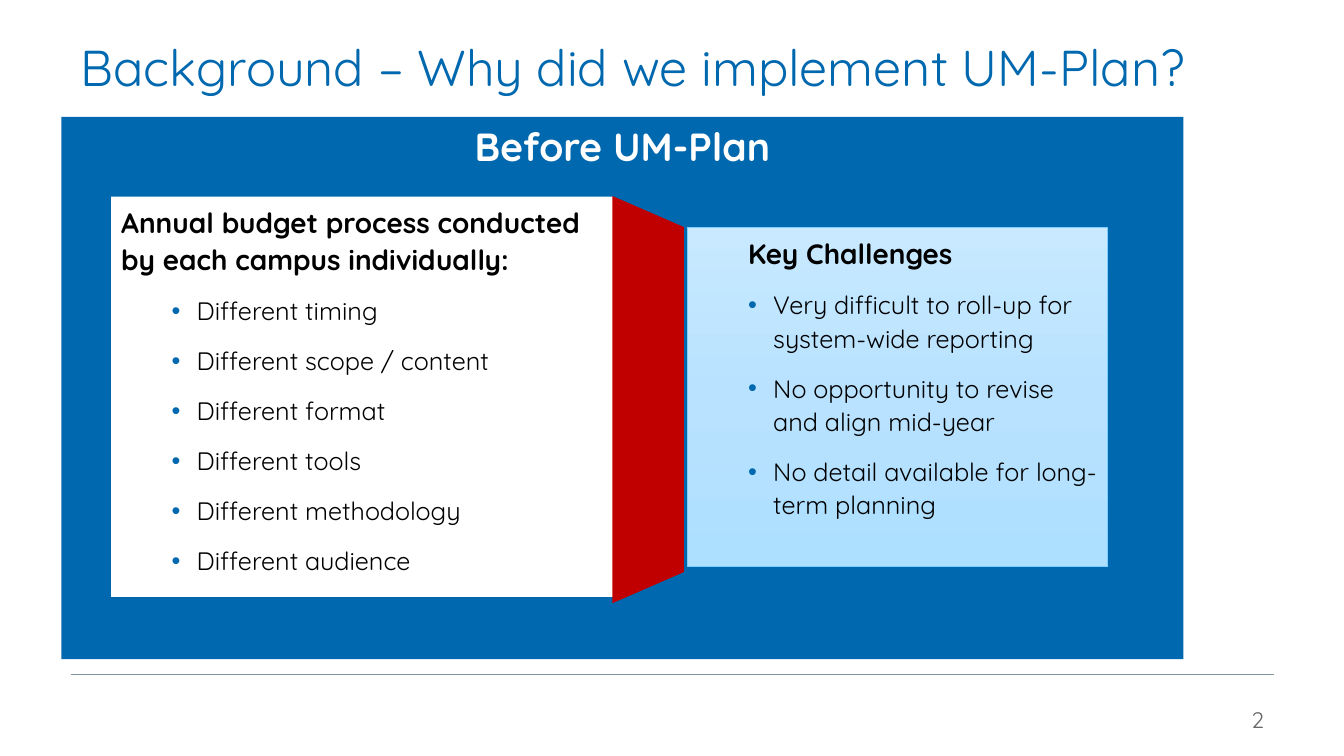
from lxml.etree import SubElement
from copy import deepcopy
from pptx import Presentation
from pptx.dml.color import RGBColor
from pptx.enum.shapes import MSO_CONNECTOR, MSO_SHAPE
from pptx.enum.text import MSO_ANCHOR, MSO_AUTO_SIZE, PP_ALIGN
from pptx.oxml.ns import qn
from pptx.util import Pt

FONT = "Quicksand"
BLUE = "0068AE"
BLACK = "000000"
GRADIENT = ((0, "C8E9FF"), (0.5, "B8E2FF"), (1, "ADDFFF"))
HEADING = {"size": Pt(20), "bold": True}
ITEM = {"size": Pt(18), "bold": False}
LIST_SPACING = {"line_spacing": 1.1, "space_before": Pt(0), "space_after": Pt(12)}
FRAME = {"word_wrap": True, "auto_size": MSO_AUTO_SIZE.NONE}


def color(value):
    return RGBColor.from_string(value)


def apply(target, values):
    for name, value in values.items():
        setattr(target, name, value)


def place(part, box):
    apply(part, dict(zip(("left", "top", "width", "height"), map(Pt, box))))


def paint(part, fill):
    part.fill.solid()
    part.fill.fore_color.rgb = color(fill)
    part.line.fill.background()


def style(paragraph, font, ink, spacing):
    apply(paragraph, spacing)
    apply(paragraph.font, {"name": FONT, **font})
    paragraph.font.color.rgb = color(ink)


def set_bullet(paragraph, margin, indent, bullet):
    properties = paragraph._p.get_or_add_pPr()
    properties.set("marL", str(Pt(margin)))
    properties.set("indent", str(Pt(indent)))
    if bullet:
        tint = SubElement(properties, qn("a:buClr"))
        SubElement(tint, qn("a:srgbClr"), val=BLUE)
        SubElement(properties, qn("a:buFont"), typeface="Arial")
        SubElement(properties, qn("a:buChar"), char=bullet)
    else:
        SubElement(properties, qn("a:buNone"))


def add_title(slide, box, wording):
    title = slide.shapes.title
    place(title, box)
    apply(title.text_frame, {**FRAME, "vertical_anchor": MSO_ANCHOR.MIDDLE})
    title.text_frame.text = wording
    style(title.text_frame.paragraphs[0], {"size": Pt(36)}, BLUE,
          {"alignment": PP_ALIGN.LEFT, "line_spacing": 0.9, "space_before": Pt(0)})


def add_panel(slide, box, wording):
    panel = slide.shapes.add_shape(MSO_SHAPE.RECTANGLE, *map(Pt, box))
    panel.shadow.inherit = False
    paint(panel, BLUE)
    apply(panel.text_frame, {**FRAME, "vertical_anchor": MSO_ANCHOR.TOP})
    panel.text_frame.text = wording
    style(panel.text_frame.paragraphs[0], {"size": Pt(28), "bold": True}, "FFFFFF",
          {"alignment": PP_ALIGN.CENTER})
    slide.shapes._spTree.insert(2, panel._element)


def fill_list(card, box, heading, heading_margin, items):
    place(card, box)
    frame = card.text_frame
    apply(frame, {**FRAME, "vertical_anchor": MSO_ANCHOR.TOP})
    frame.text = "\n".join((heading, *items))
    first, *rest = frame.paragraphs
    first.level = 1 if heading_margin else 0
    set_bullet(first, heading_margin, 0, None)
    style(first, HEADING, BLACK, LIST_SPACING)
    for paragraph in rest:
        paragraph.level = 1
        set_bullet(paragraph, 54, -18, "•")
        style(paragraph, ITEM, BLACK, LIST_SPACING)


def paint_gradient(card):
    card.fill.gradient()
    card.fill.gradient_angle = 270
    stops = card.fill.gradient_stops
    first = stops[0]._gs
    first.addnext(deepcopy(first))
    for stop, (position, tint) in zip(card.fill.gradient_stops, GRADIENT):
        stop.position = position
        stop.color.rgb = color(tint)
    card.line.color.rgb = color("7ECFFF")
    card.line.width = Pt(0.5)


def add_funnel(slide, box):
    left, top, width, height = box
    turned = (left + (width - height) / 2, top + (height - width) / 2, height, width)
    funnel = slide.shapes.add_shape(MSO_SHAPE.TRAPEZOID, *map(Pt, turned))
    funnel.shadow.inherit = False
    funnel.rotation = 90
    funnel.adjustments[0] = 0.435
    paint(funnel, "C00000")


def add_footer(slide, box, number):
    left, top, width, height = box
    rule = slide.shapes.add_connector(
        MSO_CONNECTOR.STRAIGHT, *map(Pt, (left, top, left + width, top)))
    rule.line.color.rgb = color("7F949F")
    rule.line.width = Pt(0.5)
    SubElement(rule._element.spPr, qn("a:effectLst"))
    page = slide.shapes.add_textbox(
        *map(Pt, (left + width - 72, top + height - 20, 72, 20)))
    apply(page.text_frame, {**FRAME, "vertical_anchor": MSO_ANCHOR.MIDDLE})
    page.text_frame.text = number
    style(page.text_frame.paragraphs[0], {"size": Pt(16)}, "666666",
          {"alignment": PP_ALIGN.RIGHT})


def build_background(slide, box):
    left, top, width, height = box
    add_panel(slide, box, "Before UM-Plan")
    process, challenges = list(slide.placeholders)[1:3]
    fill_list(process, (left + 35.4, top + 57, 358.6, 285.8),
              "Annual budget process conducted by each campus individually:", 0,
              [f"Different {aspect}" for aspect in (
                  "timing", "scope / content", "format", "tools",
                  "methodology", "audience")])
    paint(process, "FFFFFF")
    fill_list(challenges, (left + 447.2, top + 79.2, 300.2, 242),
              "Key Challenges", 36,
              ["Very difficult to roll-up for system-wide reporting",
               "No opportunity to revise and align mid-year",
               "No detail available for long-term planning"])
    paint_gradient(challenges)
    add_funnel(slide, (left + 393.5, top + 56.5, 51.1, 290.9))


def main():
    deck = Presentation()
    deck.slide_width, deck.slide_height = Pt(960), Pt(540)
    slide = deck.slides.add_slide(deck.slide_layouts[3])
    add_title(slide, (50.4, 20.2, 859.7, 59.8),
              "Background – Why did we implement UM-Plan?")
    build_background(slide, (43.9, 83.5, 801.4, 387.4))
    add_footer(slide, (50.4, 481.7, 859.7, 42.5), "2")
    deck.save("out.pptx")


if __name__ == "__main__":
    main()
